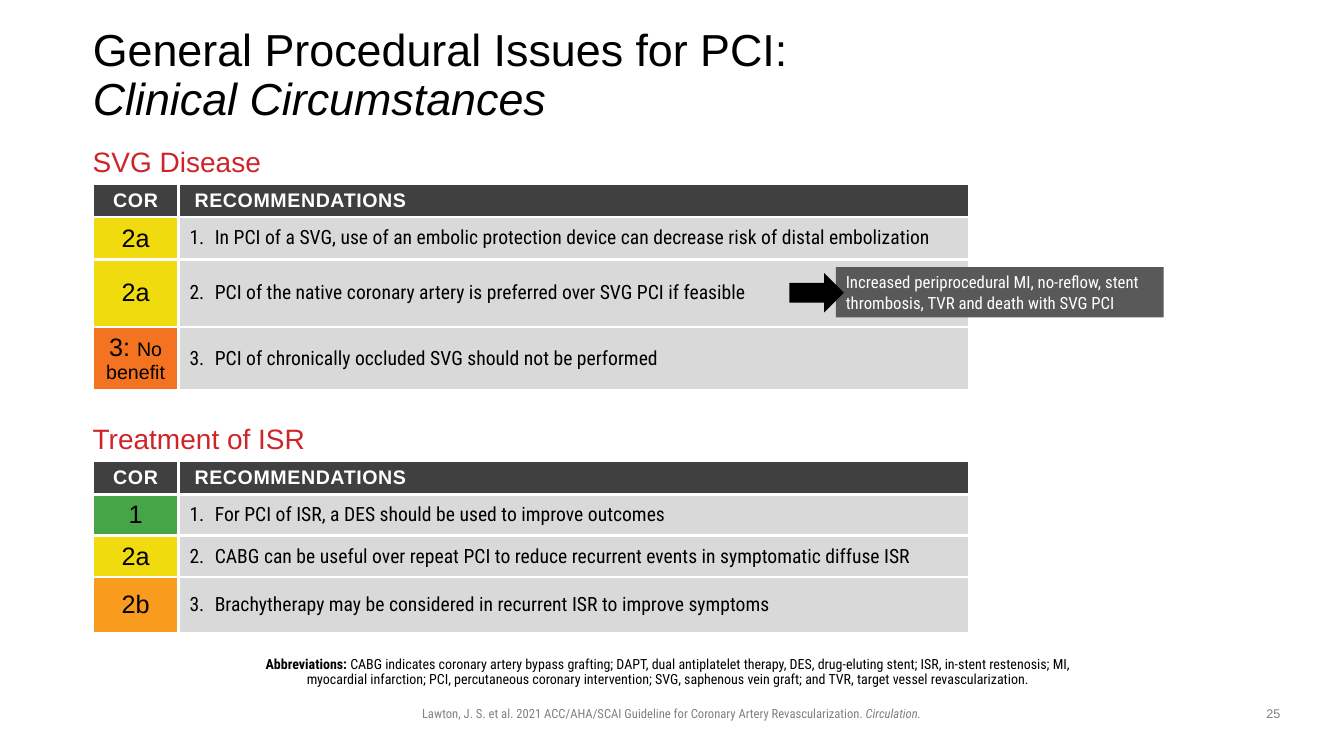
from lxml.etree import SubElement as Sub
from pptx import Presentation
from pptx.dml.color import RGBColor
from pptx.enum.shapes import MSO_SHAPE as Shape
from pptx.enum.text import MSO_ANCHOR as Anchor, MSO_AUTO_SIZE as Auto, PP_ALIGN as Align
from pptx.oxml.ns import qn
from pptx.util import Inches, Pt

SANS, SLIM = "Arial", "Roboto Condensed"
BLACK, WHITE, RED, GREY = "000000", "FFFFFF", "CF2429", "808080"
DARK, PALE, SLATE = "404040", "D9D9D9", "595959"
FILLS = {"1": "46A547", "2a": "F0DB0E", "2b": "F99B1D", "3: ": "F47320"}

SVG = [
    (0.42, ["2a"], "In PCI of a SVG, use of an embolic protection device "
                   "can decrease risk of distal embolization"),
    (0.67, ["2a"], "PCI of the native coronary artery is preferred over SVG PCI if feasible"),
    (0.48, ["3: ", "No benefit"], "PCI of chronically occluded SVG should not be performed"),
]
ISR = [
    (0.41, ["1"], "For PCI of ISR, a DES should be used to improve outcomes"),
    (0.41, ["2a"], "CABG can be useful over repeat PCI to reduce recurrent events "
                   "in symptomatic diffuse ISR"),
    (0.56, ["2b"], "Brachytherapy may be considered in recurrent ISR to improve symptoms"),
]


def paint(fill, color):
    fill.solid()
    fill.fore_color.rgb = RGBColor.from_string(color)


def write(para, text, size, face, color, bold=False, italic=False, gap=0):
    run = para.add_run()
    run.text = text
    font = run.font
    font.size, font.name, font.bold, font.italic = Pt(size), face, bold, italic
    font.color.rgb = RGBColor.from_string(color)
    if gap:
        run._r.get_or_add_rPr().set("spc", str(round(gap * 100)))


def indent(para, left, first=0):
    props = para._p.get_or_add_pPr()
    props.set("marL", str(Inches(left)))
    props.set("indent", str(Inches(first)))
    return props


def place(shape, left, top, width, height):
    shape.left, shape.top = Inches(left), Inches(top)
    shape.width, shape.height = Inches(width), Inches(height)


def inset(box, left, top, right, bottom):
    box.margin_left, box.margin_top = Inches(left), Inches(top)
    box.margin_right, box.margin_bottom = Inches(right), Inches(bottom)


def add_text(slide, area, align=Align.LEFT):
    frame = slide.shapes.add_textbox(*map(Inches, area)).text_frame
    frame.word_wrap = True
    para = frame.paragraphs[0]
    para.alignment = align
    return para


def add_shape(slide, kind, area, color):
    shape = slide.shapes.add_shape(kind, *map(Inches, area))
    shape.shadow.inherit = False
    paint(shape.fill, color)
    shape.line.fill.background()
    return shape


def style_cell(cell, color):
    props = cell._tc.get_or_add_tcPr()
    for side in ("lnL", "lnR", "lnT", "lnB"):
        line = Sub(props, qn("a:" + side), w=str(Pt(2.25)))
        Sub(Sub(line, qn("a:solidFill")), qn("a:srgbClr"), val=WHITE)
    paint(cell.fill, color)
    cell.vertical_anchor = Anchor.MIDDLE
    return cell.text_frame.paragraphs[0]


def add_grid(slide, top, items):
    heights = [0.24] + [item[0] for item in items]
    frame = slide.shapes.add_table(len(heights), 2, Inches(0.92), Inches(top),
                                   Inches(8.69), Inches(sum(heights)))
    table = frame.table
    for col, width in zip(table.columns, (0.85, 7.84)):
        col.width = Inches(width)
    for row, height in zip(table.rows, heights):
        row.height = Inches(height)

    # Header row
    for col, (label, gap) in enumerate([("COR", 0.5), ("RECOMMENDATIONS", 0.4)]):
        para = style_cell(table.cell(0, col), DARK)
        if col:
            indent(para, 0.06)
        else:
            para.alignment = Align.CENTER
        write(para, label, 14, SANS, WHITE, bold=True, gap=gap)

    # Class and numbered advice
    for num, (_, grade, advice) in enumerate(items, 1):
        left, right = table.cell(num, 0), table.cell(num, 1)
        for cell in (left, right):
            inset(cell, 0.05, 0.05, 0.05, 0.05)
        para = style_cell(left, FILLS[grade[0]])
        para.alignment = Align.CENTER
        for text, size in zip(grade, (18, 14)):
            write(para, text, size, SANS, BLACK)
        para = style_cell(right, PALE)
        Sub(indent(para, 0.31, -0.25), qn("a:buAutoNum"),
            type="arabicPeriod", startAt=str(num))
        write(para, advice, 14, SLIM, BLACK)


def add_part(slide, name, top, items):
    para = add_text(slide, (0.82, top, 3.95, 0.4))
    para.line_spacing = 0.9
    write(para, name, 20, SANS, RED)
    add_grid(slide, top + 0.4, items)


def add_title(slide):
    title = slide.shapes.title
    place(title, 0.92, 0.4, 11.5, 0.72)
    frame = title.text_frame
    frame.auto_size, frame.vertical_anchor = Auto.NONE, Anchor.MIDDLE
    inset(frame, 0, 0, 0, 0)
    para = frame.paragraphs[0]
    para.alignment, para.line_spacing = Align.LEFT, 0.9
    write(para, "General Procedural Issues for PCI:", 32, SANS, BLACK)
    para.add_line_break()
    write(para, "Clinical Circumstances", 32, SANS, BLACK, italic=True)


def add_note(slide):
    note = slide.placeholders[1]
    place(note, 2.62, 6.47, 8.1, 0.3)
    frame = note.text_frame
    frame.auto_size = Auto.NONE
    inset(frame, 0, 0.05, 0.1, 0.05)
    para = frame.paragraphs[0]
    para.alignment, para.line_spacing, para.space_before = Align.CENTER, 0.9, Pt(0)
    Sub(indent(para, 0), qn("a:buNone"))
    write(para, "Abbreviations: ", 10, SLIM, BLACK, bold=True)
    write(para, "CABG indicates coronary artery bypass grafting; DAPT, dual antiplatelet "
                "therapy, DES, drug-eluting stent; ISR, in-stent restenosis; MI, myocardial "
                "infarction; PCI, percutaneous coronary intervention; SVG, saphenous vein "
                "graft; and TVR, target vessel revascularization.", 10, SLIM, BLACK)


def add_callout(slide):
    box = add_shape(slide, Shape.RECTANGLE, (8.29, 2.65, 3.25, 0.5), SLATE)
    box.text_frame.word_wrap = True
    para = box.text_frame.paragraphs[0]
    para.alignment = Align.LEFT
    write(para, "Increased periprocedural MI, no-reflow, stent thrombosis, "
                "TVR and death with SVG PCI", 12, SLIM, WHITE)
    add_shape(slide, Shape.RIGHT_ARROW, (7.83, 2.71, 0.54, 0.39), BLACK)


def main():
    deck = Presentation()
    deck.slide_width, deck.slide_height = Inches(13.33), Inches(7.5)
    slide = deck.slides.add_slide(deck.slide_layouts[1])

    # Title and tables
    add_title(slide)
    add_part(slide, "SVG Disease", 1.42, SVG)
    add_callout(slide)
    add_part(slide, "Treatment of ISR", 4.17, ISR)

    # Notes and page number
    add_note(slide)
    para = add_text(slide, (3.17, 6.95, 6.98, 0.25), Align.CENTER)
    write(para, "Lawton, J. S. et al. 2021 ACC/AHA/SCAI Guideline for Coronary Artery "
                "Revascularization. ", 9, SLIM, GREY)
    write(para, "Circulation.", 9, SLIM, GREY, italic=True)
    para = add_text(slide, (12.42, 6.95, 0.42, 0.26), Align.CENTER)
    write(para, "25", 9, SANS, GREY)

    deck.save("out.pptx")


if __name__ == "__main__":
    main()
